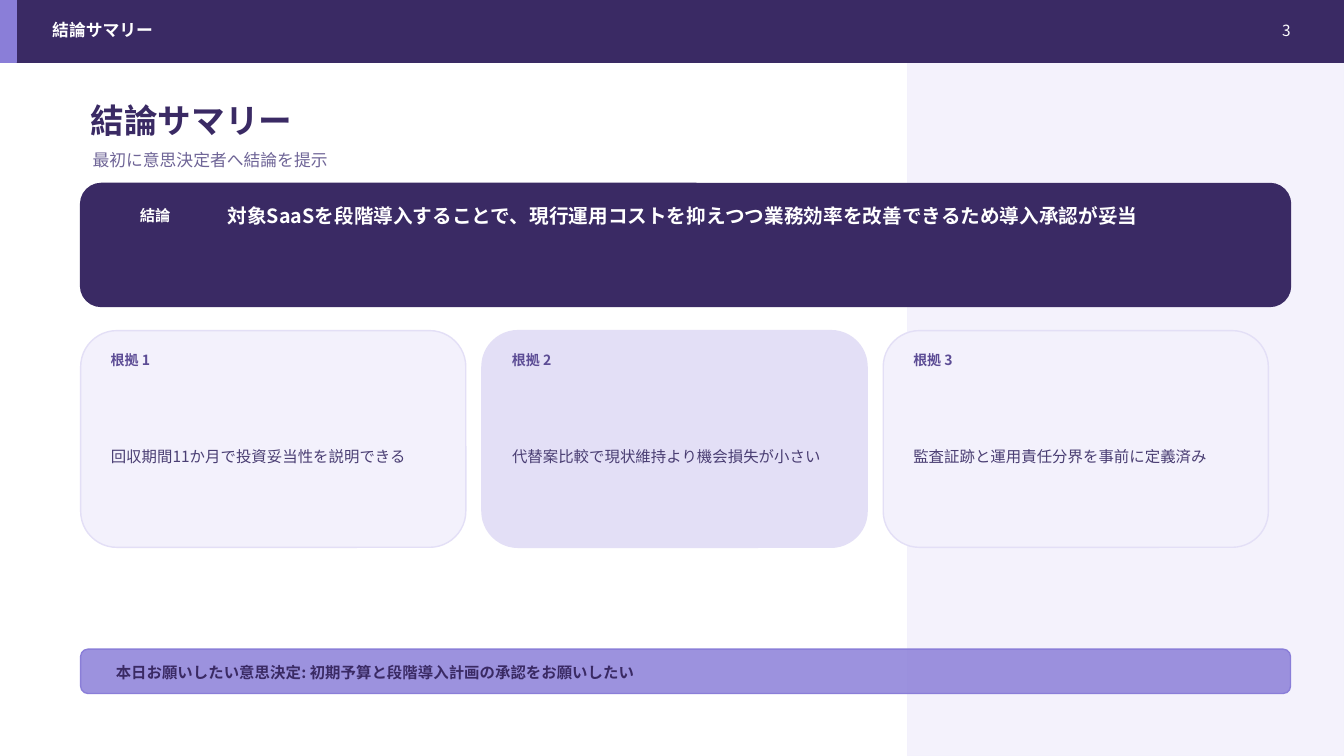
from lxml import etree
from pptx import Presentation
from pptx.dml.color import RGBColor
from pptx.enum import shapes, text
from pptx.oxml import ns
from pptx.util import Inches, Pt

FONT = "Noto Sans CJK JP"
NAVY, VIOLET, PALE, LILAC, WHITE = "3A2A64", "8A7ED8", "F3F1FC", "E3DFF6", "FFFFFF"
RECT = shapes.MSO_SHAPE.RECTANGLE
ROUND = shapes.MSO_SHAPE.ROUNDED_RECTANGLE
LEFT, CENTER, RIGHT = text.PP_ALIGN.LEFT, text.PP_ALIGN.CENTER, text.PP_ALIGN.RIGHT

deck = Presentation()
deck.slide_width = Inches(13.33)
deck.slide_height = Inches(7.5)
page = deck.slides.add_slide(deck.slide_layouts[5])


def add_panel(kind, left, top, width, height, fill, line, opacity=100):
    panel = page.shapes.add_shape(kind, Inches(left), Inches(top), Inches(width), Inches(height))
    panel.shadow.inherit = False
    panel.fill.solid()
    panel.fill.fore_color.rgb = RGBColor.from_string(fill)
    panel.line.color.rgb = RGBColor.from_string(line)
    panel.line.width = Pt(1)
    if opacity < 100:
        color = panel.fill._xPr.find(ns.qn("a:solidFill"))[0]
        etree.SubElement(color, ns.qn("a:alpha")).set("val", str(opacity * 1000))


def write(words, left, top, width, height, size, color, bold=False, align=LEFT, box=None):
    if box is None:
        box = page.shapes.add_textbox(0, 0, 0, 0)
    box.left, box.top = Inches(left), Inches(top)
    box.width, box.height = Inches(width), Inches(height)
    frame = box.text_frame
    frame.text = words
    frame.word_wrap = True
    frame.auto_size = text.MSO_AUTO_SIZE.NONE
    frame.vertical_anchor = text.MSO_ANCHOR.MIDDLE
    para = frame.paragraphs[0]
    para.alignment = align
    span = para.runs[0]
    span.font.name = FONT
    span.font.size = Pt(size)
    span.font.bold = bold
    span.font.color.rgb = RGBColor.from_string(color)
    etree.SubElement(span.font._element, ns.qn("a:ea")).set("typeface", FONT)


add_panel(RECT, 9, 0.55, 4.33, 6.95, PALE, PALE, 88)
add_panel(RECT, 0, 0, 13.33, 0.62, NAVY, NAVY)
add_panel(RECT, 0, 0, 0.16, 0.62, VIOLET, VIOLET)
write("結論サマリー", 0.42, 0.17, 8.8, 0.26, 12, WHITE, True)
write("3", 12.15, 0.17, 0.75, 0.26, 11, WHITE, align=RIGHT)

write("結論サマリー", 0.8, 0.95, 11.4, 0.48, 24, NAVY, True, box=page.shapes.title)
write("最初に意思決定者へ結論を提示", 0.82, 1.44, 11.2, 0.3, 12, "6F6597")

add_panel(ROUND, 0.8, 1.82, 12, 1.22, NAVY, NAVY)
write("結論", 1.04, 2.02, 1, 0.24, 11, WHITE, True, CENTER)
write("対象SaaSを段階導入することで、現行運用コストを抑えつつ業務効率を改善できるため導入承認が妥当",
      2.16, 1.98, 10.4, 0.32, 14, WHITE, True)

reasons = [
    ("回収期間11か月で投資妥当性を説明できる", PALE),
    ("代替案比較で現状維持より機会損失が小さい", LILAC),
    ("監査証跡と運用責任分界を事前に定義済み", PALE),
]
for index, (reason, fill) in enumerate(reasons):
    left = 0.8 + index * 3.98
    add_panel(ROUND, left, 3.28, 3.82, 2.15, fill, LILAC)
    write(f"根拠 {index + 1}", left + 0.2, 3.46, 0.9, 0.22, 10, "5C4C95", True)
    write(reason, left + 0.2, 3.78, 3.42, 1.5, 11, "4A3E73")

add_panel(ROUND, 0.8, 6.44, 12, 0.44, VIOLET, VIOLET, 84)
write("本日お願いしたい意思決定: 初期予算と段階導入計画の承認をお願いしたい",
      1.05, 6.56, 11.5, 0.22, 11, NAVY, True)

deck.save("out.pptx")
